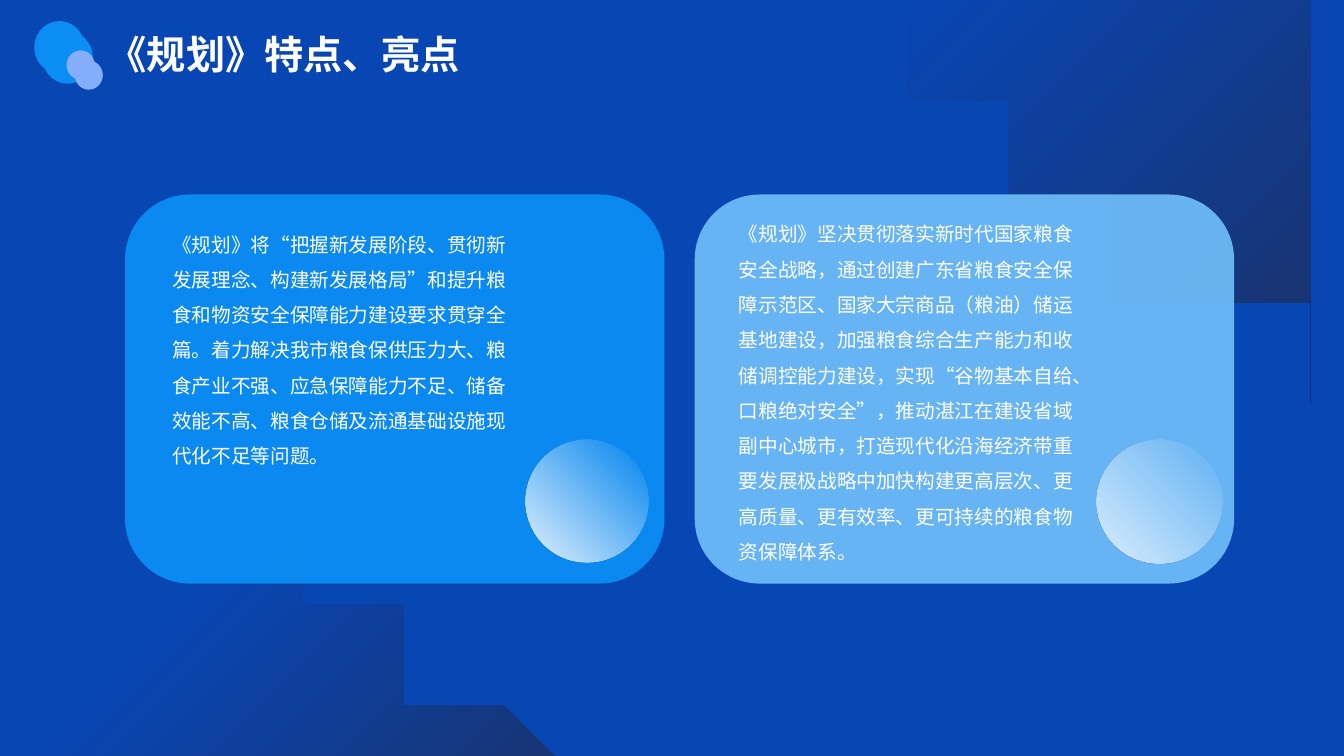
from lxml.etree import SubElement
from pptx import Presentation
from pptx.dml.color import RGBColor
from pptx.enum.shapes import MSO_SHAPE
from pptx.enum.text import MSO_AUTO_SIZE
from pptx.oxml.ns import qn
from pptx.util import Inches, Pt

# Content
TITLE = "《规划》特点、亮点"
STRATEGY_TEXT = (
    "《规划》坚决贯彻落实新时代国家粮食安全战略，通过创建广东省粮食安全保障示范区、"
    "国家大宗商品（粮油）储运基地建设，加强粮食综合生产能力和收储调控能力建设，"
    "实现“谷物基本自给、口粮绝对安全”，推动湛江在建设省域副中心城市，"
    "打造现代化沿海经济带重要发展极战略中加快构建更高层次、更高质量、更有效率、"
    "更可持续的粮食物资保障体系。"
)
CONCEPT_TEXT = (
    "《规划》将“把握新发展阶段、贯彻新发展理念、构建新发展格局”"
    "和提升粮食和物资安全保障能力建设要求贯穿全篇。着力解决我市粮食保供压力大、"
    "粮食产业不强、应急保障能力不足、储备效能不高、粮食仓储及流通基础设施现代化不足等问题。"
)
BLUE, NAVY, AZURE, SKY = "0846B4", "1A3169", "0B8EF4", "6DBBF8"
LILAC, PALE, WHITE = "84AEFA", "CEE8FD", "FFFFFF"

# Card left edge, colour, text, text box, circle box
CARDS = [
    (1.24, AZURE, CONCEPT_TEXT, (1.61, 2.14, 3.68, 2.64), (5.21, 4.36, 1.22, 1.22)),
    (6.89, SKY, STRATEGY_TEXT, (7.23, 2.04, 3.65, 3.63), (10.88, 4.36, 1.24, 1.23)),
]
CARD_TOP, CARD_WIDTH, CARD_HEIGHT = 1.93, 5.35, 3.86

# Wave outlines: a pair is a corner, six numbers are a curve; then the first gradient stop
WAVES = [
    ([(8.75, 0), (13.33, 0), (13.33, 3.73), (13.27, 3.69),
      (11.89, 3.01, 10.51, 2.33, 9.61, 0.99),
      (9.39, 0.66, 9.13, 0.36, 8.85, 0.1)], 0),
    ([(0, 3), (0.21, 3.1),
      (1.37, 3.67, 2.48, 4.31, 3.22, 5.45),
      (3.75, 6.27, 4.47, 6.82, 5.26, 7.29),
      (5.64, 7.5), (0, 7.5)], 43),
]
# Title dots: the same pair twice, the second shifted
DOT_PAIR = [(0.34, 0.21, 0.5, 0.52, AZURE), (0.66, 0.5, 0.28, 0.29, LILAC)]
DOT_SHIFTS = [(0.08, 0.1), (0, 0)]
CURVE_STEPS = 24

presentation = Presentation()
presentation.slide_width, presentation.slide_height = Inches(13.33), Inches(7.5)
slide = presentation.slides.add_slide(presentation.slide_layouts[6])


def color(value):
    return RGBColor.from_string(value)


def set_alpha(color_element, percent):
    SubElement(color_element, qn("a:alpha"), val=str(percent * 1000))


def clean(shape):
    shape.shadow.inherit = False
    shape.line.fill.background()
    return shape


def add_plain(kind, box, fill, alpha=100):
    shape = clean(slide.shapes.add_shape(kind, *map(Inches, box)))
    shape.fill.solid()
    shape.fill.fore_color.rgb = color(fill)
    if alpha < 100:
        set_alpha(shape.fill._xPr.find(".//" + qn("a:srgbClr")), alpha)
    return shape


def set_gradient(shape, stops, angle):
    shape.fill.gradient()
    shape.fill.gradient_angle = angle
    for stop, (position, value) in zip(shape.fill.gradient_stops, stops):
        stop.position = position / 100
        stop.color.rgb = color(value)


def fade_from_lower_left(shape):
    """Circular gradient centred on the lower left corner, ending transparent."""
    set_gradient(shape, [(10, PALE), (93, PALE)], 0)
    gradient = shape.fill._xPr.find(qn("a:gradFill"))
    set_alpha(gradient.findall(".//" + qn("a:srgbClr"))[-1], 0)
    linear = gradient.find(qn("a:lin"))
    circle = gradient.makeelement(qn("a:path"), {"path": "circle"})
    SubElement(circle, qn("a:fillToRect"), l="0", t="100000", r="100000", b="0")
    gradient.replace(linear, circle)


def outline_points(outline):
    points = []
    for part in outline:
        if len(part) == 2:
            points.append(part)
            continue
        controls = [points[-1], part[:2], part[2:4], part[4:]]
        for step in range(1, CURVE_STEPS + 1):
            t = step / CURVE_STEPS
            weights = ((1 - t) ** 3, 3 * t * (1 - t) ** 2, 3 * t * t * (1 - t), t ** 3)
            points.append(tuple(
                sum(weight * control[axis] for weight, control in zip(weights, controls))
                for axis in (0, 1)))
    return points


def add_text(box, text, size, bold=False, spacing=None, grow=False):
    frame = slide.shapes.add_textbox(*map(Inches, box)).text_frame
    frame.word_wrap = True
    if grow:
        frame.auto_size = MSO_AUTO_SIZE.SHAPE_TO_FIT_TEXT
    paragraph = frame.paragraphs[0]
    paragraph.line_spacing = spacing
    run = paragraph.add_run()
    run.text = text
    run.font.name, run.font.size, run.font.bold = "Arial", Pt(size), bold
    run.font.color.rgb = color(WHITE)


# Background and waves
slide.background.fill.solid()
slide.background.fill.fore_color.rgb = color(BLUE)
for outline, first_stop in WAVES:
    points = outline_points(outline)
    builder = slide.shapes.build_freeform(*points[0], scale=Inches(1))
    builder.add_line_segments(points[1:], close=True)
    set_gradient(clean(builder.convert_to_shape()), [(first_stop, BLUE), (100, NAVY)], 315)

# Title with dots
for shift_x, shift_y in DOT_SHIFTS:
    for left, top, width, height, fill in DOT_PAIR:
        add_plain(MSO_SHAPE.OVAL, (left + shift_x, top + shift_y, width, height), fill)
add_text((0.97, 0.25, 3.88, 0.57), TITLE, 28, bold=True, grow=True)

# Cards
for left, fill, text, text_box, circle_box in CARDS:
    card_box = (left, CARD_TOP, CARD_WIDTH, CARD_HEIGHT)
    add_plain(MSO_SHAPE.ROUNDED_RECTANGLE, card_box, fill, alpha=94)
    add_text(text_box, text, 14, spacing=1.5, grow=text is STRATEGY_TEXT)
    fade_from_lower_left(add_plain(MSO_SHAPE.OVAL, circle_box, PALE))

presentation.save("out.pptx")
